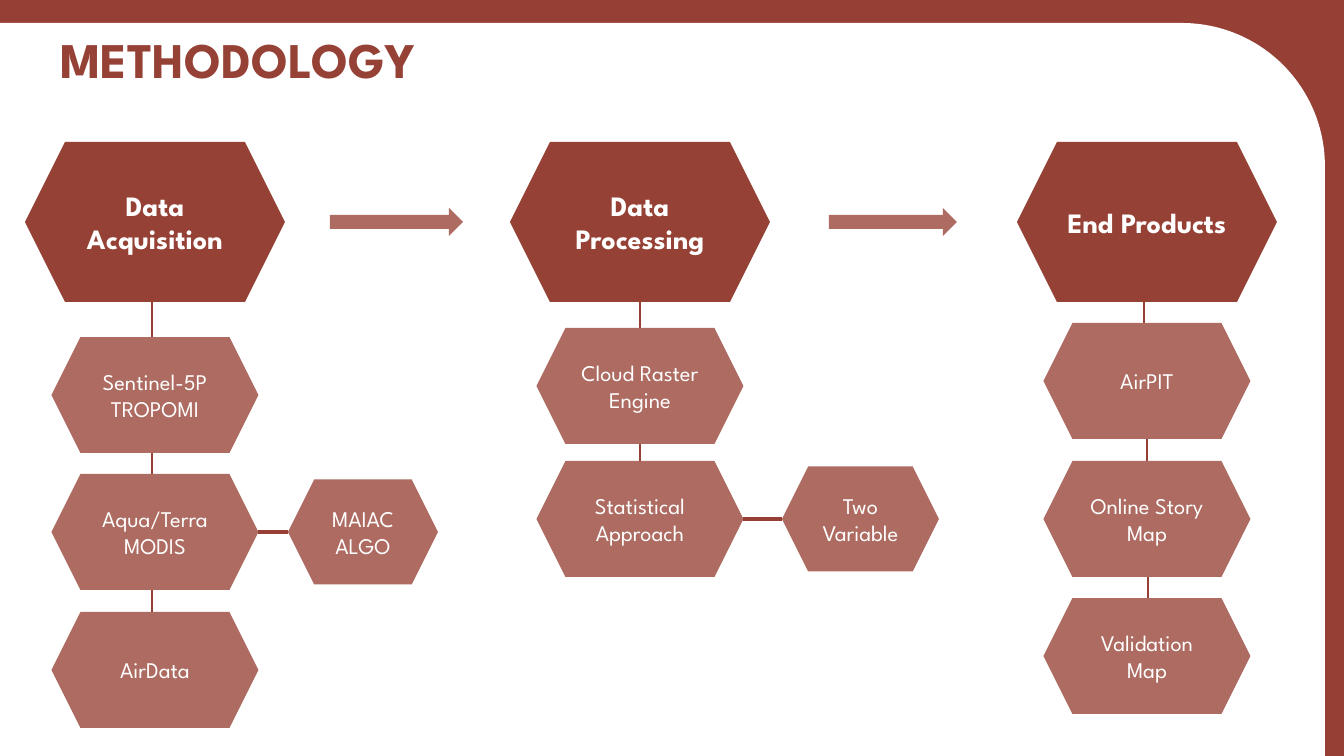
"""Build the methodology slide: three hexagon columns joined by arrows."""
from lxml.etree import SubElement
from pptx import Presentation
from pptx.dml.color import RGBColor
from pptx.enum.shapes import MSO_CONNECTOR as CONN, MSO_SHAPE as SHAPE
from pptx.enum.text import MSO_ANCHOR as ANCHOR, PP_ALIGN as ALIGN
from pptx.oxml.ns import qn
from pptx.util import Emu, Pt

FONT = "League Spartan"
FRAME = RGBColor(0x96, 0x40, 0x35)
DARK = RGBColor(0x96, 0x41, 0x35)
LIGHT = RGBColor(0xAD, 0x6B, 0x61)
WHITE = RGBColor(0xFF, 0xFF, 0xFF)

TITLE = "METHODOLOGY"
# heading, centre x, steps (label, top, x of the link above)
COLUMNS = [
    ("Data Acquisition", 155, [("Sentinel-5P\nTROPOMI", 337, 152),
                               ("Aqua/Terra MODIS", 474, 152),
                               ("AirData", 612, 152)]),
    ("Data Processing", 640, [("Cloud Raster Engine", 328, 640),
                              ("Statistical Approach", 461, 640)]),
    ("End Products", 1147, [("AirPIT", 323, 1144),
                            ("Online Story Map", 461, 1147),
                            ("Validation Map", 598, 1148)]),
]
# label, left, width, column, step it hangs from
BRANCHES = [("MAIAC\nALGO", 288, 150, 0, 1), ("Two Variable", 782, 157, 1, 1)]
ARROWS = [(330, 133), (829, 128)]

SLIDE_W, SLIDE_H = 1344, 756
HEAD_TOP, HEAD_W, HEAD_H = 142, 260, 160
STEP_W, STEP_H, BRANCH_H, ARROW_H = 207, 116, 105, 28
PANEL_TOP, PANEL_W, PANEL_RADIUS = 23, 1325, 143


def px(n):
    return Emu(round(n * 914400 / 100.8))


def add_shape(s, kind, x, y, w, h, fill):
    sp = s.shapes.add_shape(kind, px(x), px(y), px(w), px(h))
    sp.shadow.inherit = False
    sp.fill.solid()
    sp.fill.fore_color.rgb = fill
    sp.line.fill.background()
    return sp


def set_font(p, size, color, bold):
    p.font.name, p.font.size, p.font.bold = FONT, Pt(size), bold
    p.font.color.rgb = color


def add_hexagon(s, label, x, y, w, h, fill, size, bold=False):
    tf = add_shape(s, SHAPE.HEXAGON, x, y, w, h, fill).text_frame
    tf.margin_left = tf.margin_right = tf.margin_top = tf.margin_bottom = px(10)
    tf.vertical_anchor = ANCHOR.MIDDLE
    tf.word_wrap = True
    tf.text = label
    for p in tf.paragraphs:
        p.alignment = ALIGN.CENTER
        set_font(p, size, WHITE, bold)


def add_link(s, x1, y1, x2, y2, width):
    link = s.shapes.add_connector(CONN.STRAIGHT, px(x1), px(y1), px(x2), px(y2))
    link.line.color.rgb = FRAME
    link.line.width = Pt(width)
    SubElement(link._element.spPr, qn("a:effectLst"))


def add_title(s):
    title = s.shapes.title
    s.shapes._spTree.append(title._element)
    title.left, title.top, title.width, title.height = map(px, (50, 33, 1233, 63))
    tf = title.text_frame
    tf.margin_left = tf.margin_right = px(10)
    tf.margin_top = tf.margin_bottom = px(5)
    tf.vertical_anchor = ANCHOR.MIDDLE
    tf.text = TITLE
    p = tf.paragraphs[0]
    p.alignment = ALIGN.LEFT
    p.line_spacing = 0.8
    set_font(p, 35.6, DARK, True)


def main():
    prs = Presentation()
    prs.slide_width, prs.slide_height = px(SLIDE_W), px(SLIDE_H)
    s = prs.slides.add_slide(prs.slide_layouts[5])

    add_shape(s, SHAPE.RECTANGLE, 0, 0, SLIDE_W, SLIDE_H, FRAME)
    panel_h = SLIDE_H - PANEL_TOP
    panel = add_shape(s, SHAPE.ROUND_1_RECTANGLE, 0, PANEL_TOP, PANEL_W, panel_h, WHITE)
    panel.adjustments[0] = PANEL_RADIUS / panel_h
    add_title(s)

    for heading, center, steps in COLUMNS:
        add_hexagon(s, heading, center - HEAD_W / 2, HEAD_TOP, HEAD_W, HEAD_H, DARK, 20, True)
        bottom = HEAD_TOP + HEAD_H
        for label, top, link_x in steps:
            add_link(s, link_x, bottom, link_x, top, 1)
            add_hexagon(s, label, center - STEP_W / 2, top, STEP_W, STEP_H, LIGHT, 16)
            bottom = top + STEP_H

    for label, left, width, column, step in BRANCHES:
        _, center, steps = COLUMNS[column]
        middle = steps[step][1] + STEP_H / 2
        add_link(s, center + STEP_W / 2, middle, left, middle, 3)
        add_hexagon(s, label, left, middle - BRANCH_H / 2, width, BRANCH_H, LIGHT, 16)

    for left, width in ARROWS:
        top = HEAD_TOP + (HEAD_H - ARROW_H) / 2
        add_shape(s, SHAPE.RIGHT_ARROW, left, top, width, ARROW_H, LIGHT)

    prs.save("out.pptx")


if __name__ == "__main__":
    main()
